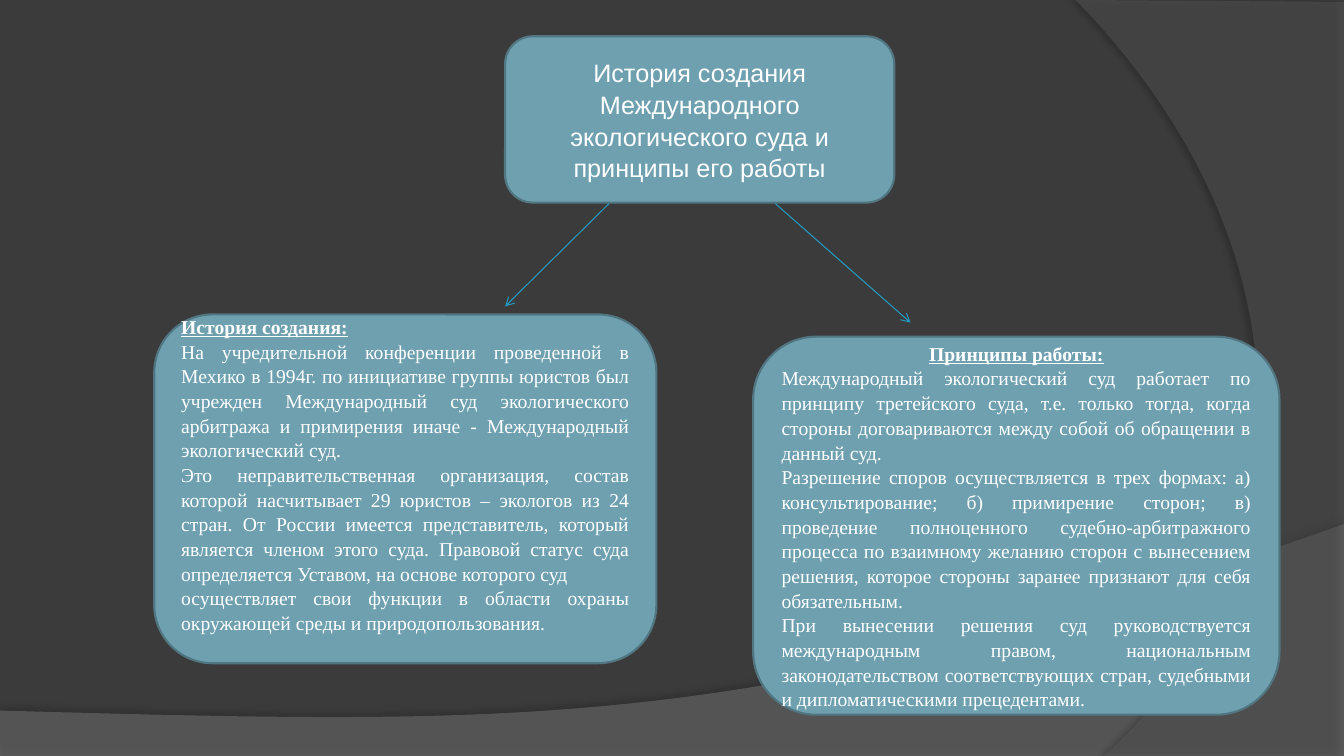
from lxml import etree
from pptx import Presentation
from pptx.dml.color import RGBColor
from pptx.enum.shapes import MSO_CONNECTOR, MSO_SHAPE
from pptx.enum.text import MSO_ANCHOR, MSO_AUTO_SIZE, PP_ALIGN
from pptx.oxml.ns import qn
from pptx.util import Inches, Pt

ROUND = MSO_SHAPE.ROUNDED_RECTANGLE
PROCESS = MSO_SHAPE.FLOWCHART_ALTERNATE_PROCESS
STRAIGHT = MSO_CONNECTOR.STRAIGHT
MIDDLE = MSO_ANCHOR.MIDDLE
LEFT, CENTER, JUSTIFY = PP_ALIGN.LEFT, PP_ALIGN.CENTER, PP_ALIGN.JUSTIFY

COLORS = {
    "back": "3B3B3B", "wave": "7F7F7F", "arc": "5E5E5E", "box": "6EA0B0",
    "edge": "517682", "arrow": "239BC2", "text": "FFFFFF", "shade": "000000",
}
SPACING = 1.05

TITLE = "История создания Международного экологического суда и принципы его работы"
HISTORY = [
    "На учредительной конференции проведенной в Мехико в 1994г. по инициативе "
    "группы юристов был учрежден Международный суд экологического арбитража и "
    "примирения иначе - Международный экологический суд.",
    "Это неправительственная организация, состав которой насчитывает 29 юристов – "
    "экологов из 24 стран. От России имеется представитель, который является "
    "членом этого суда. Правовой статус суда определяется Уставом, на основе "
    "которого суд",
    "осуществляет свои функции в области охраны окружающей среды и "
    "природопользования.",
]
RULES = [
    "Международный экологический суд работает по принципу третейского суда, т.е. "
    "только тогда, когда стороны договариваются между собой об обращении в данный "
    "суд.",
    "Разрешение споров осуществляется в трех формах: а) консультирование; б) "
    "примирение сторон; в) проведение полноценного судебно-арбитражного процесса "
    "по взаимному желанию сторон с вынесением решения, которое стороны заранее "
    "признают для себя обязательным.",
    "При вынесении решения суд руководствуется международным правом, национальным "
    "законодательством соответствующих стран, судебными и дипломатическими "
    "прецедентами.",
]


def color(name):
    return RGBColor.from_string(COLORS[name])


def curve(a, b, c, d, steps=60):
    """Points along a cubic curve, both ends included."""
    points = []
    for i in range(steps + 1):
        t = i / steps
        u = 1 - t
        parts = (u ** 3, 3 * u * u * t, 3 * u * t * t, t ** 3)
        points.append(tuple(sum(w * p[k] for w, p in zip(parts, (a, b, c, d)))
                            for k in (0, 1)))
    return points


def add_alpha(node, percent):
    etree.SubElement(node, qn("a:alpha"), val=str(percent * 1000))


def add_sweep(slide, points, fill, alpha, shade, blur, dist, angle):
    """Translucent background outline with a soft shadow."""
    spots = [(Inches(x), Inches(y)) for x, y in points]
    build = slide.shapes.build_freeform(*spots[0], scale=1.0)
    build.add_line_segments(spots[1:], close=True)
    shape = build.convert_to_shape()
    shape.fill.solid()
    shape.fill.fore_color.rgb = color(fill)
    shape.line.fill.background()
    shape.shadow.inherit = False
    props = shape._element.spPr
    add_alpha(props.find(qn("a:solidFill")).find(qn("a:srgbClr")), alpha)
    outer = etree.SubElement(
        props.find(qn("a:effectLst")), qn("a:outerShdw"), blurRad=str(Pt(blur)),
        dist=str(Pt(dist)), dir=str(angle * 60000), algn="ctr", rotWithShape="0")
    tint = etree.SubElement(outer, qn("a:srgbClr"), val=COLORS["shade"])
    add_alpha(tint, shade)


def add_box(slide, kind, x, y, w, h):
    box = slide.shapes.add_shape(kind, Inches(x), Inches(y), Inches(w), Inches(h))
    box.shadow.inherit = False
    box.fill.solid()
    box.fill.fore_color.rgb = color("box")
    box.line.color.rgb = color("edge")
    box.line.width = Pt(1.5)
    return box


def add_run(para, text, font, size, align, strong=False):
    para.alignment = align
    para.line_spacing = SPACING
    run = para.add_run()
    run.text = text
    run.font.name = font
    run.font.size = Pt(size)
    run.font.bold = run.font.underline = strong
    run.font.color.rgb = color("text")


def fill_box(box, head, align, body, bottom=0.05):
    frame = box.text_frame
    frame.word_wrap = True
    frame.vertical_anchor = MIDDLE
    frame.margin_bottom = Inches(bottom)
    add_run(frame.paragraphs[0], head, "Times New Roman", 14, align, True)
    for text in body:
        add_run(frame.add_paragraph(), text, "Times New Roman", 14, JUSTIFY)


def set_title(slide, x, y, w, h):
    title = slide.shapes.title
    title.left, title.top = Inches(x), Inches(y)
    title.width, title.height = Inches(w), Inches(h)
    frame = title.text_frame
    frame.word_wrap = True
    frame.auto_size = MSO_AUTO_SIZE.NONE
    frame.vertical_anchor = MIDDLE
    frame.margin_left = frame.margin_right = Inches(0.18)
    add_run(frame.paragraphs[0], TITLE, "Arial", 18, CENTER)
    # Bring the title in front of its box
    slide.shapes._spTree.append(title._element)


def add_arrow(slide, x1, y1, x2, y2):
    arrow = slide.shapes.add_connector(
        STRAIGHT, Inches(x1), Inches(y1), Inches(x2), Inches(y2))
    arrow.line.color.rgb = color("arrow")
    arrow.line.width = Pt(0.75)
    etree.SubElement(arrow.line._get_or_add_ln(), qn("a:tailEnd"), type="arrow")
    etree.SubElement(arrow._element.spPr, qn("a:effectLst"))


def main():
    deck = Presentation()
    deck.slide_width, deck.slide_height = Inches(13.33), Inches(7.5)
    slide = deck.slides.add_slide(deck.slide_layouts[5])

    # Background
    slide.background.fill.solid()
    slide.background.fill.fore_color.rgb = color("back")
    wave = [(0, 7.5), (13.33, 7.5)]
    wave += curve((13.33, 5.2), (7.45, 7.29), (5.21, 7.19), (0, 7.05))
    add_sweep(slide, wave, "wave", 45, 35, 4, 3.5, 270)
    arc = [(13.33, 0.02), (13.33, 7.5)]
    arc += curve((10.95, 7.5), (12.46, 6.19), (13.57, 3), (10.67, 0))
    add_sweep(slide, arc, "arc", 40, 45, 4, 4, 180)

    # Title
    place = (5.01, 0.36, 3.86, 1.65)
    add_box(slide, ROUND, *place)
    set_title(slide, *place)

    # Two branches
    add_arrow(slide, 6.04, 2.02, 5.01, 3.04)
    story = add_box(slide, ROUND, 1.53, 3.12, 4.98, 3.46)
    fill_box(story, "История создания:", LEFT, HISTORY, bottom=0.34)
    add_arrow(slide, 7.69, 2.02, 9.03, 3.2)
    rules = add_box(slide, PROCESS, 7.47, 3.34, 5.22, 3.75)
    fill_box(rules, "Принципы работы:", CENTER, RULES)

    deck.save("out.pptx")


if __name__ == "__main__":
    main()
